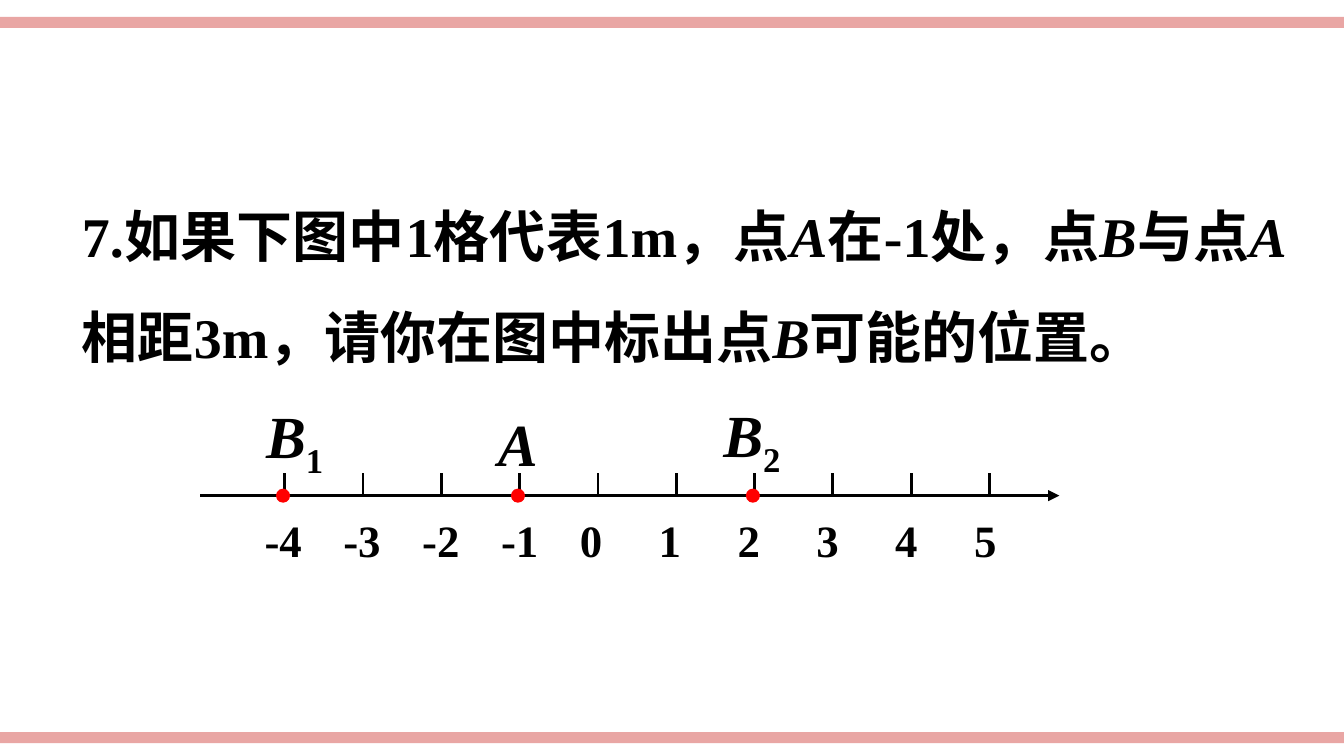
import pptx
import pptx.util
import pptx.dml.color
import pptx.enum.shapes
import pptx.enum.text
import pptx.oxml
import pptx.oxml.ns

Cm, Pt = pptx.util.Cm, pptx.util.Pt
SHAPE = pptx.enum.shapes.MSO_SHAPE
ALIGN = pptx.enum.text.PP_ALIGN
FONT = "Times New Roman"
BLACK, RED, PINK = "000000", "FF0000", "E9A6A4"
SLIDE_WIDTH, SLIDE_HEIGHT = 25.4, 14.29


def colour(hex_code):
    return pptx.dml.color.RGBColor.from_string(hex_code)


def add_filled(shapes, preset, box, fill):
    """Plain shape in one colour; box is left, top, width, height in cm."""
    filled = shapes.add_shape(preset, *map(Cm, box))
    filled.shadow.inherit = False
    filled.fill.solid()
    filled.fill.fore_color.rgb = colour(fill)
    filled.line.fill.background()
    return filled


def add_line(shapes, start, end, arrow=False):
    line = shapes.add_connector(pptx.enum.shapes.MSO_CONNECTOR.STRAIGHT,
                                *map(Cm, start + end))
    line.line.color.rgb = colour(BLACK)
    line.line.width = Pt(1.5)
    if arrow:
        tail = pptx.oxml.parse_xml(
            f'<a:tailEnd {pptx.oxml.ns.nsdecls("a")} type="triangle"/>')
        line.line._get_or_add_ln().append(tail)
    line._element.spPr.append(
        pptx.oxml.parse_xml(f'<a:effectLst {pptx.oxml.ns.nsdecls("a")}/>'))


def add_text(shapes, box, text, size, spacing=None, align=ALIGN.LEFT):
    """Bold text; pieces between asterisks are italic, after _ subscript."""
    frame = shapes.add_textbox(*map(Cm, box)).text_frame
    frame.word_wrap = True
    frame.auto_size = pptx.enum.text.MSO_AUTO_SIZE.SHAPE_TO_FIT_TEXT
    paragraph = frame.paragraphs[0]
    paragraph.alignment = align
    paragraph.line_spacing = spacing
    paragraph.font.name = FONT
    paragraph.font.size = Pt(size)
    paragraph.font.bold = True
    paragraph.font.color.rgb = colour(BLACK)
    for index, piece in enumerate(text.split("*")):
        if not piece:
            continue
        run = paragraph.add_run()
        run.text = piece.lstrip("_")
        run.font.italic = index % 2 == 1
        if piece.startswith("_"):
            run._r.get_or_add_rPr().set("baseline", "-25000")


def add_border_bars(slide, top, bottom):
    for bar_top in (top, bottom):
        add_filled(slide.shapes, SHAPE.RECTANGLE,
                   (0, bar_top, SLIDE_WIDTH, 0.21), PINK)


def add_question(slide, box):
    add_text(slide.shapes, box,
             "7.如果下图中1格代表1m，点*A*在-1处，点*B*与点*A*相距3m，"
             "请你在图中标出点*B*可能的位置。",
             30, spacing=1.5, align=ALIGN.JUSTIFY)


def add_number_line(slide, left, axis_y, width):
    first, last = -4, 5
    tick_step, label_step = 1.48, 1.49

    def tick_x(value):
        return left + 1.6 + (value - first) * tick_step

    # Axis, ticks and numbers
    scale = slide.shapes.add_group_shape().shapes
    add_line(scale, (left, axis_y), (left + width, axis_y), arrow=True)
    for value in range(first, last + 1):
        x = tick_x(value)
        add_line(scale, (x, axis_y - 0.42), (x, axis_y))
        label_left = left + 0.97 + (value - first) * label_step
        add_text(scale, (label_left, axis_y - 0.31, 1.45, 1.6),
                 str(value), 24, spacing=1.5)

    # Marked points: value, name, offset of the name from tick and axis
    points = [(-4, "*B*_1", -0.6, -1.95),
              (2, "*B*_2", -0.84, -1.98),
              (-1, "*A*", -0.66, -1.8)]
    dot = 0.23
    for value, name, dx, dy in points:
        x = tick_x(value)
        marker = add_filled(slide.shapes, SHAPE.OVAL,
                            (x - 0.03 - dot / 2, axis_y - dot / 2, dot, dot), RED)
        marker.line.color.rgb = colour(RED)
        marker.line.width = Pt(1)
        add_text(slide.shapes, (x + dx, axis_y + dy, 2.18, 1.63), name, 32)


def main():
    deck = pptx.Presentation()
    deck.slide_width, deck.slide_height = Cm(SLIDE_WIDTH), Cm(SLIDE_HEIGHT)
    slide = deck.slides.add_slide(deck.slide_layouts[6])
    add_border_bars(slide, top=0.32, bottom=13.84)
    add_question(slide, (1.3, 3.05, 23.27, 3.86))
    add_number_line(slide, left=3.78, axis_y=9.37, width=16.24)
    deck.save("out.pptx")


if __name__ == "__main__":
    main()
